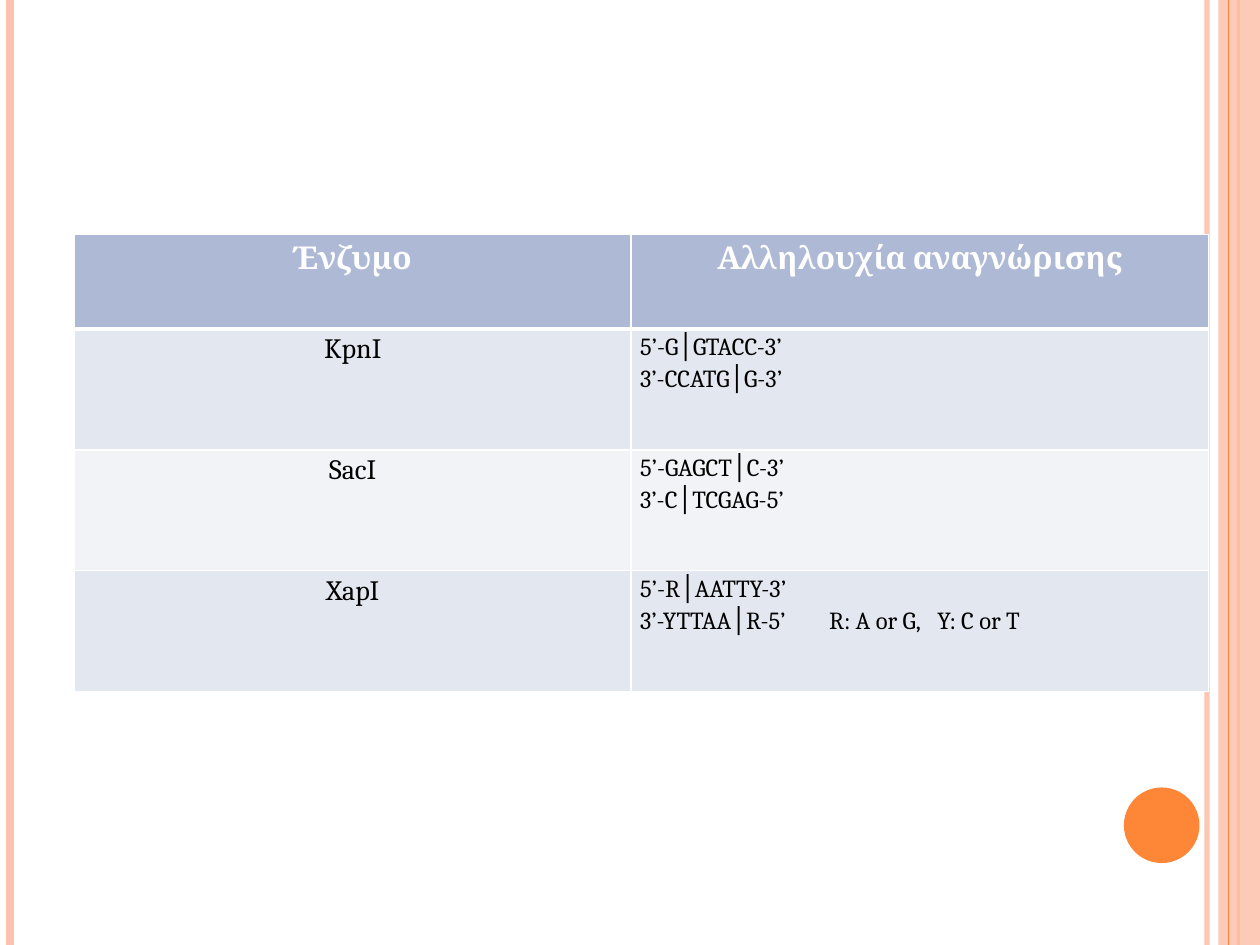
from lxml import etree
from pptx import Presentation
from pptx.dml.color import RGBColor
from pptx.enum import shapes, text
from pptx.oxml import ns
from pptx.util import Inches, Pt

WHITE = RGBColor(0xFF, 0xFF, 0xFF)
BLACK = RGBColor(0, 0, 0)
PEACH = RGBColor(0xFE, 0xC3, 0xAE)
ORANGE = RGBColor(0xFE, 0x86, 0x37)
HEADER_FILL = RGBColor(0xAE, 0xBA, 0xD5)
BAND_FILLS = (RGBColor(0xE3, 0xE7, 0xEF), RGBColor(0xF2, 0xF3, 0xF7))

FONT = "Cambria"
PAGE_HEIGHT = 7.5
COLUMN_WIDTHS = (4.42, 4.58)
HEADER_HEIGHT, ROW_HEIGHT = 0.75, 0.96
NOTE_TABS = (1.5, 2.36)

HEADINGS = ("Ένζυμο", "Αλληλουχία αναγνώρισης")
ENZYMES = (
    ("KpnI", ("5’-G│GTACC-3’", "3’-CCATG│G-3’")),
    ("SacI", ("5’-GAGCT│C-3’", "3’-C│TCGAG-5’")),
    ("XapI", ("5’-R│AATTY-3’", "3’-YTTAA│R-5’\tR: A or G,\tY: C or T")),
)


def set_alpha(fill, percent):
    color = fill._xPr.find(ns.qn("a:solidFill"))[0]
    etree.SubElement(color, ns.qn("a:alpha"), val=str(percent * 1000))


def add_stripe(page, x, color, width, alpha=None):
    """Vertical line over the full page height."""
    line = page.shapes.add_connector(
        shapes.MSO_CONNECTOR.STRAIGHT, Inches(x), 0, Inches(x), Inches(PAGE_HEIGHT))
    line.line.width = Pt(width)
    line.line.color.rgb = color
    if alpha:
        set_alpha(line.line.fill, alpha)
    etree.SubElement(line._element.spPr, ns.qn("a:effectLst"))


def add_filled_shape(page, kind, left, top, width, height, color):
    shape = page.shapes.add_shape(
        kind, Inches(left), Inches(top), Inches(width), Inches(height))
    shape.shadow.inherit = False
    shape.fill.solid()
    shape.fill.fore_color.rgb = color
    shape.line.fill.background()
    return shape


def set_borders(cell, bottom=1):
    properties = cell._tc.get_or_add_tcPr()
    widths = {"lnL": 1, "lnR": 1, "lnT": 1, "lnB": bottom}
    for position, (side, width) in enumerate(widths.items()):
        border = etree.Element(ns.qn(f"a:{side}"), w=str(Pt(width)))
        fill = etree.SubElement(border, ns.qn("a:solidFill"))
        etree.SubElement(fill, ns.qn("a:srgbClr"), val=str(WHITE))
        properties.insert(position, border)


def add_tab_stops(para, positions):
    tabs = etree.SubElement(para._p.get_or_add_pPr(), ns.qn("a:tabLst"))
    for position in positions:
        etree.SubElement(tabs, ns.qn("a:tab"), pos=str(Inches(position)), algn="l")


def fill_cell(cell, lines, fill, size, color=BLACK, bold=False, centered=False,
              spacing=None):
    cell.fill.solid()
    cell.fill.fore_color.rgb = fill
    frame = cell.text_frame
    frame.text = "\n".join(lines)
    for para in frame.paragraphs:
        if "\t" in para.text:
            add_tab_stops(para, NOTE_TABS)
        para.alignment = text.PP_ALIGN.CENTER if centered else text.PP_ALIGN.LEFT
        para.line_spacing = spacing
        para.font.name = FONT
        para.font.size = Pt(size)
        para.font.bold = bold
        para.font.color.rgb = color


def fill_body_cell(cell, lines, fill, size, centered=False):
    cell.margin_left = cell.margin_right = Inches(0.07)
    cell.margin_top = cell.margin_bottom = 0
    fill_cell(cell, lines, fill, size, centered=centered, spacing=1.15)
    set_borders(cell)


def add_enzyme_table(page):
    height = HEADER_HEIGHT + ROW_HEIGHT * len(ENZYMES)
    table = page.shapes.add_table(
        len(ENZYMES) + 1, len(HEADINGS), Inches(0.59), Inches(1.86),
        Inches(sum(COLUMN_WIDTHS)), Inches(height)).table
    for column, width in zip(table.columns, COLUMN_WIDTHS):
        column.width = Inches(width)
    for index, row in enumerate(table.rows):
        row.height = Inches(ROW_HEIGHT if index else HEADER_HEIGHT)

    for column, heading in enumerate(HEADINGS):
        cell = table.cell(0, column)
        fill_cell(cell, [heading], HEADER_FILL, 18, WHITE, bold=True, centered=True)
        set_borders(cell, bottom=3)
    for index, (enzyme, strands) in enumerate(ENZYMES):
        fill = BAND_FILLS[index % 2]
        fill_body_cell(table.cell(index + 1, 0), [enzyme], fill, 16, centered=True)
        fill_body_cell(table.cell(index + 1, 1), strands, fill, 14)


def add_decoration(page):
    add_stripe(page, 9.58, PEACH, 3, alpha=93)
    add_stripe(page, 0.08, PEACH, 4.5)
    add_stripe(page, 9.83, ORANGE, 1.5)
    band = add_filled_shape(
        page, shapes.MSO_SHAPE.RECTANGLE, 9.67, 0, 0.33, PAGE_HEIGHT, PEACH)
    set_alpha(band.fill, 87)
    add_stripe(page, 9.75, ORANGE, 0.75)
    add_filled_shape(page, shapes.MSO_SHAPE.OVAL, 8.92, 6.25, 0.6, 0.6, ORANGE)


def main():
    deck = Presentation()
    deck.slide_width = Inches(10)
    deck.slide_height = Inches(PAGE_HEIGHT)
    page = deck.slides.add_slide(deck.slide_layouts[6])
    add_decoration(page)
    add_enzyme_table(page)
    deck.save("out.pptx")


if __name__ == "__main__":
    main()
